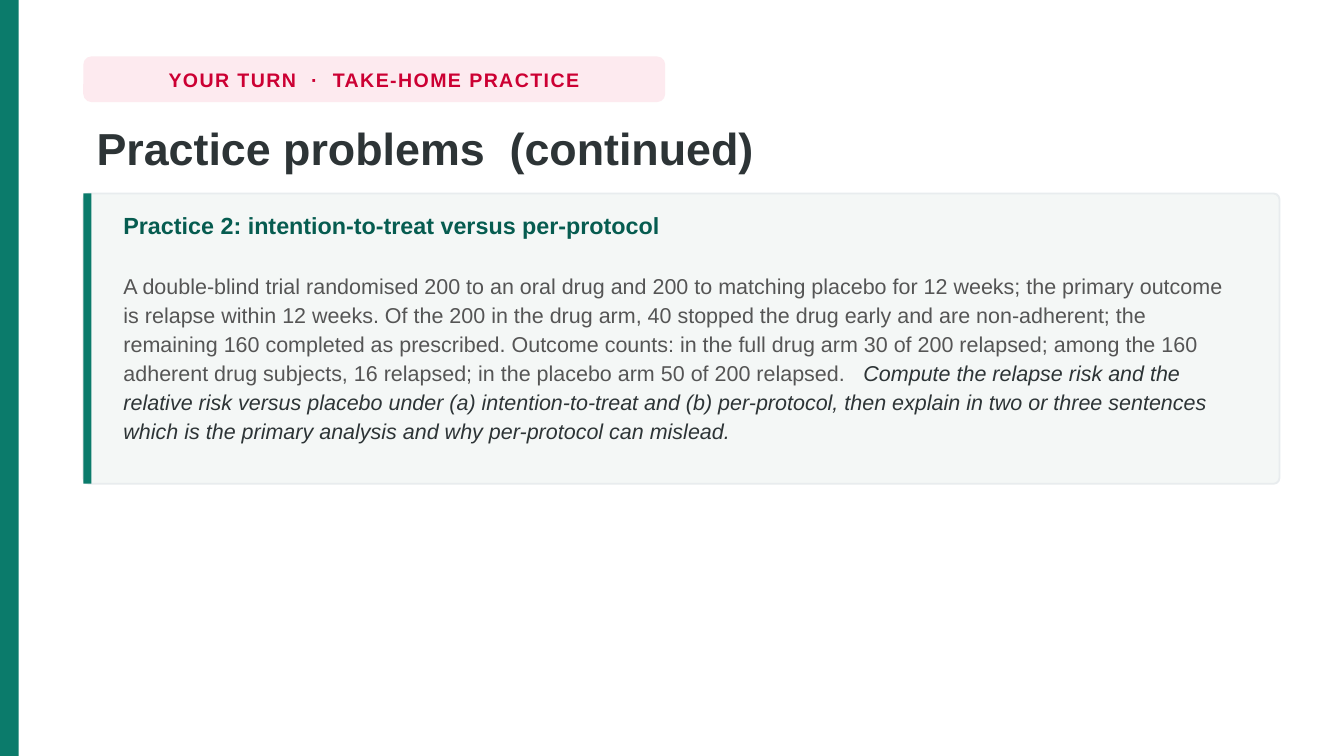
from pptx import Presentation
from pptx.dml.color import RGBColor
from pptx.enum.shapes import MSO_SHAPE
from pptx.enum.text import MSO_ANCHOR, PP_ALIGN
from pptx.util import Pt

PX = 4572
TEAL = RGBColor(0x0B, 0x7B, 0x6B)
DARK_TEAL = RGBColor(0x06, 0x5C, 0x50)
ROSE = RGBColor(0xFD, 0xEA, 0xEF)
CRIMSON = RGBColor(0xCC, 0x00, 0x33)
INK = RGBColor(0x2D, 0x34, 0x36)
GREY = RGBColor(0x55, 0x55, 0x55)
MIST = RGBColor(0xF4, 0xF7, 0xF6)
EDGE = RGBColor(0xE8, 0xEC, 0xEE)

TAG = {"size": Pt(10.5), "bold": True, "color": CRIMSON}
TITLE = {"size": Pt(24), "bold": True, "color": INK}
HEADING = {"size": Pt(12.5), "bold": True, "color": DARK_TEAL}
BODY = {"size": Pt(11.5), "bold": False, "color": GREY}
TASK = {"size": Pt(11.5), "bold": False, "italic": True, "color": INK}

prs = Presentation()
prs.slide_width, prs.slide_height = 2000 * PX, 1125 * PX
slide = prs.slides.add_slide(prs.slide_layouts[6])


def add_panel(kind, box, fill, corner=None):
    panel = slide.shapes.add_shape(kind, *(n * PX for n in box))
    panel.shadow.inherit = False
    panel.fill.solid()
    panel.fill.fore_color.rgb = fill
    panel.line.fill.background()
    if corner is not None:
        panel.adjustments[0] = corner
    return panel


def add_run(paragraph, text, style):
    run = paragraph.add_run()
    run.text = text
    run.font.name = "Arial"
    for attribute, value in style.items():
        if attribute == "color":
            run.font.color.rgb = value
        else:
            setattr(run.font, attribute, value)
    return run


add_panel(MSO_SHAPE.RECTANGLE, (0, 0, 28, 1125), TEAL)
add_panel(MSO_SHAPE.ROUNDED_RECTANGLE, (124, 84, 866, 68), ROSE, 0.18)

tag = slide.shapes.add_textbox(*(n * PX for n in (124, 84, 866, 68))).text_frame
tag.word_wrap = False
tag.vertical_anchor = MSO_ANCHOR.MIDDLE
tag_line = tag.paragraphs[0]
tag_line.alignment = PP_ALIGN.CENTER
tag_run = add_run(tag_line, "YOUR TURN  ·  TAKE-HOME PRACTICE", TAG)
tag_run.font._element.set("spc", "80")

card = add_panel(MSO_SHAPE.ROUNDED_RECTANGLE, (124, 288, 1780, 432), MIST, 0.02)
card.line.color.rgb = EDGE
card.line.width = Pt(1)
add_panel(MSO_SHAPE.RECTANGLE, (124, 288, 12, 432), TEAL)

texts = [
    ((124, 168, 1780, 112), 10, 1.02, [[("Practice problems  (continued)", TITLE)]]),
    ((164, 304, 1696, 400), 6, 1.12, [
        [("Practice 2: intention-to-treat versus per-protocol", HEADING)],
        [
            ("A double-blind trial randomised 200 to an oral drug and 200 to matching placebo "
             "for 12 weeks; the primary outcome is relapse within 12 weeks. Of the 200 in the "
             "drug arm, 40 stopped the drug early and are non-adherent; the remaining 160 "
             "completed as prescribed. Outcome counts: in the full drug arm 30 of 200 relapsed; "
             "among the 160 adherent drug subjects, 16 relapsed; in the placebo arm 50 of 200 "
             "relapsed.   ", BODY),
            ("Compute the relapse risk and the relative risk versus placebo under (a) "
             "intention-to-treat and (b) per-protocol, then explain in two or three sentences "
             "which is the primary analysis and why per-protocol can mislead.", TASK),
        ],
    ]),
]
for box, top_inset, line_spacing, paragraphs in texts:
    frame = slide.shapes.add_textbox(*(n * PX for n in box)).text_frame
    frame.word_wrap = True
    frame.margin_top = top_inset * PX
    for index, runs in enumerate(paragraphs):
        paragraph = frame.add_paragraph() if index else frame.paragraphs[0]
        paragraph.line_spacing = line_spacing
        if index:
            paragraph.space_before = Pt(16.5)
        for text, style in runs:
            add_run(paragraph, text, style)

prs.save("out.pptx")
